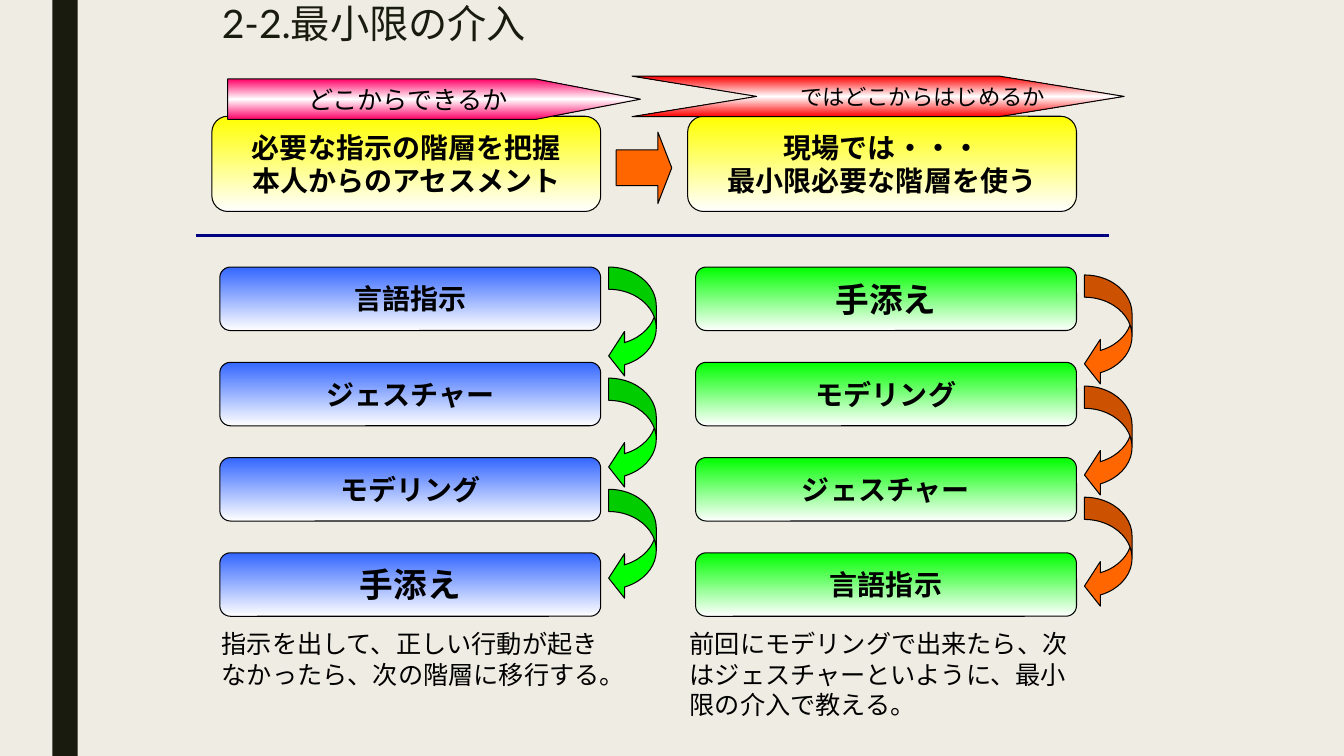
from dataclasses import dataclass

from lxml.etree import SubElement
from pptx import Presentation
from pptx.dml.color import RGBColor
from pptx.enum.shapes import MSO_CONNECTOR, MSO_SHAPE
from pptx.enum.text import MSO_ANCHOR, PP_ALIGN
from pptx.oxml.ns import qn
from pptx.util import Cm, Pt

CREAM = RGBColor(0xEF, 0xED, 0xE3)
DARK = RGBColor(0x19, 0x1B, 0x0E)
BLACK = RGBColor(0x00, 0x00, 0x00)
WHITE = RGBColor(0xFF, 0xFF, 0xFF)
BLUE = RGBColor(0x33, 0x66, 0xFF)
NAVY = RGBColor(0x00, 0x00, 0x80)
GREEN = RGBColor(0x00, 0xFF, 0x00)
ORANGE = RGBColor(0xFF, 0x66, 0x00)
YELLOW = RGBColor(0xFF, 0xFF, 0x00)
PINK = RGBColor(0xFF, 0x00, 0x66)
RED = RGBColor(0xFF, 0x00, 0x00)

STEP_TOP, STEP_PITCH = 6.73, 2.4
STEP_WIDTH, STEP_HEIGHT = 9.6, 1.6
ARROW_OFFSET, ARROW_PITCH = 9.8, 2.8
EMPHASISED = "手添え"


@dataclass
class Area:
    """Position and size in centimetres."""
    left: float
    top: float
    width: float
    height: float

    def lengths(self) -> tuple:
        return Cm(self.left), Cm(self.top), Cm(self.width), Cm(self.height)


@dataclass
class Column:
    left: float
    colour: RGBColor
    steps: list[str]
    arrow_top: float
    arrow_colour: RGBColor
    heading: str
    heading_left: float
    caption: str
    caption_area: Area


@dataclass
class Banner:
    kind: MSO_SHAPE
    area: Area
    point: float
    colour: RGBColor
    text: str
    size: int
    left_margin: float


COLUMNS = [
    Column(5.54, BLUE, ["言語指示", "ジェスチャー", "モデリング", "手添え"],
           6.73, GREEN, "必要な指示の階層を把握\n本人からのアセスメント", 5.34,
           "指示を出して、正しい行動が起きなかったら、次の階層に移行する。",
           Area(5.34, 15.72, 10.4, 1.78)),
    Column(17.53, GREEN, ["手添え", "モデリング", "ジェスチャー", "言語指示"],
           6.93, ORANGE, "現場では・・・\n最小限必要な階層を使う", 17.33,
           "前回にモデリングで出来たら、次はジェスチャーといように、最小限の介入で教える。",
           Area(17.13, 15.72, 10.4, 2.54)),
]
BANNERS = [
    Banner(MSO_SHAPE.PENTAGON, Area(5.74, 1.99, 10.4, 1.02), 2.59, PINK,
           "どこからできるか", 18, 0.25),
    Banner(MSO_SHAPE.CHEVRON, Area(15.93, 1.92, 12.4, 1.02), 3.08, RED,
           "ではどこからはじめるか", 16, 2.51),
]


def add_figure(page, kind: MSO_SHAPE, area: Area, colours: list[RGBColor],
               adjustments: tuple = (), outlined: bool = True):
    """Draw a shape; several colours make an even vertical gradient."""
    shape = page.shapes.add_shape(kind, *area.lengths())
    shape.shadow.inherit = False
    for index, value in enumerate(adjustments):
        shape.adjustments[index] = value
    if len(colours) == 1:
        shape.fill.solid()
        shape.fill.fore_color.rgb = colours[0]
    else:
        shape.fill.gradient()
        shape.fill.gradient_angle = 270
        stops = shape._element.spPr.find(".//" + qn("a:gsLst"))
        stops.clear()
        for index, colour in enumerate(colours):
            position = str(100000 * index // (len(colours) - 1))
            stop = SubElement(stops, qn("a:gs"), pos=position)
            SubElement(stop, qn("a:srgbClr"), val=str(colour))
    if outlined:
        shape.line.color.rgb = BLACK
        shape.line.width = Pt(0.75)
    else:
        shape.line.fill.background()
    return shape


def write_label(shape, text: str, size: int, font: str, bold: bool) -> None:
    frame = shape.text_frame
    frame.word_wrap = False
    frame.vertical_anchor = MSO_ANCHOR.MIDDLE
    frame.text = text
    for para in frame.paragraphs:
        para.alignment = PP_ALIGN.CENTER
        style_font(para, size, font, BLACK, bold)


def style_font(para, size: int, font: str, colour: RGBColor, bold: bool = False) -> None:
    para.font.size = Pt(size)
    para.font.name = font
    para.font.bold = bold
    para.font.color.rgb = colour


def add_text(page, area: Area, text: str, size: int, font: str, colour: RGBColor):
    box = page.shapes.add_textbox(*area.lengths())
    box.text_frame.word_wrap = True
    box.text_frame.text = text
    para = box.text_frame.paragraphs[0]
    style_font(para, size, font, colour)
    return para


def add_block(page, area: Area, colour: RGBColor, text: str, size: int) -> None:
    block = add_figure(page, MSO_SHAPE.ROUNDED_RECTANGLE, area, [colour, WHITE], (0.167,))
    write_label(block, text, size, "Arial", True)


def add_column(page, column: Column) -> None:
    for row, step in enumerate(column.steps):
        area = Area(column.left, STEP_TOP + row * STEP_PITCH, STEP_WIDTH, STEP_HEIGHT)
        add_block(page, area, column.colour, step, 24 if step == EMPHASISED else 20)
    for row in range(len(column.steps) - 1):
        area = Area(column.left + ARROW_OFFSET,
                    column.arrow_top + row * ARROW_PITCH, 1.2, 2.8)
        add_figure(page, MSO_SHAPE.CURVED_LEFT_ARROW, area, [column.arrow_colour],
                   (0.467, 0.934, 0.333))
    add_text(page, column.caption_area, column.caption, 18, "Arial", BLACK)
    add_block(page, Area(column.heading_left, 2.93, 9.8, 2.4), YELLOW, column.heading, 20)


def add_banner(page, banner: Banner) -> None:
    shape = add_figure(page, banner.kind, banner.area,
                       [banner.colour, WHITE, banner.colour], (banner.point,))
    write_label(shape, banner.text, banner.size, "Lato", False)
    shape.text_frame.margin_left = Cm(banner.left_margin)


def main() -> None:
    deck = Presentation()
    deck.slide_width, deck.slide_height = Cm(33.87), Cm(19.05)
    page = deck.slides.add_slide(deck.slide_layouts[6])

    # Background, side bar and title
    page.background.fill.solid()
    page.background.fill.fore_color.rgb = CREAM
    add_figure(page, MSO_SHAPE.RECTANGLE, Area(1.32, 0, 0.64, 19.05), [DARK], outlined=False)
    title = add_text(page, Area(5.34, 0, 21.13, 2), "2-2.最小限の介入", 28, "Lato", DARK)
    title.line_spacing = 0.89

    # Two hierarchies of prompts
    for column in COLUMNS:
        add_column(page, column)

    # Divider and arrow between the headings
    divider = page.shapes.add_connector(MSO_CONNECTOR.STRAIGHT,
                                        Cm(4.93), Cm(5.93), Cm(27.94), Cm(5.93))
    divider.line.color.rgb = NAVY
    divider.line.width = Pt(2)
    SubElement(divider._element.spPr, qn("a:effectLst"))
    add_figure(page, MSO_SHAPE.RIGHT_ARROW, Area(15.53, 3.33, 1.4, 1.8), [ORANGE], (0.5, 0.25))

    # Banners over the headings
    for banner in BANNERS:
        add_banner(page, banner)

    deck.save("out.pptx")


if __name__ == "__main__":
    main()
